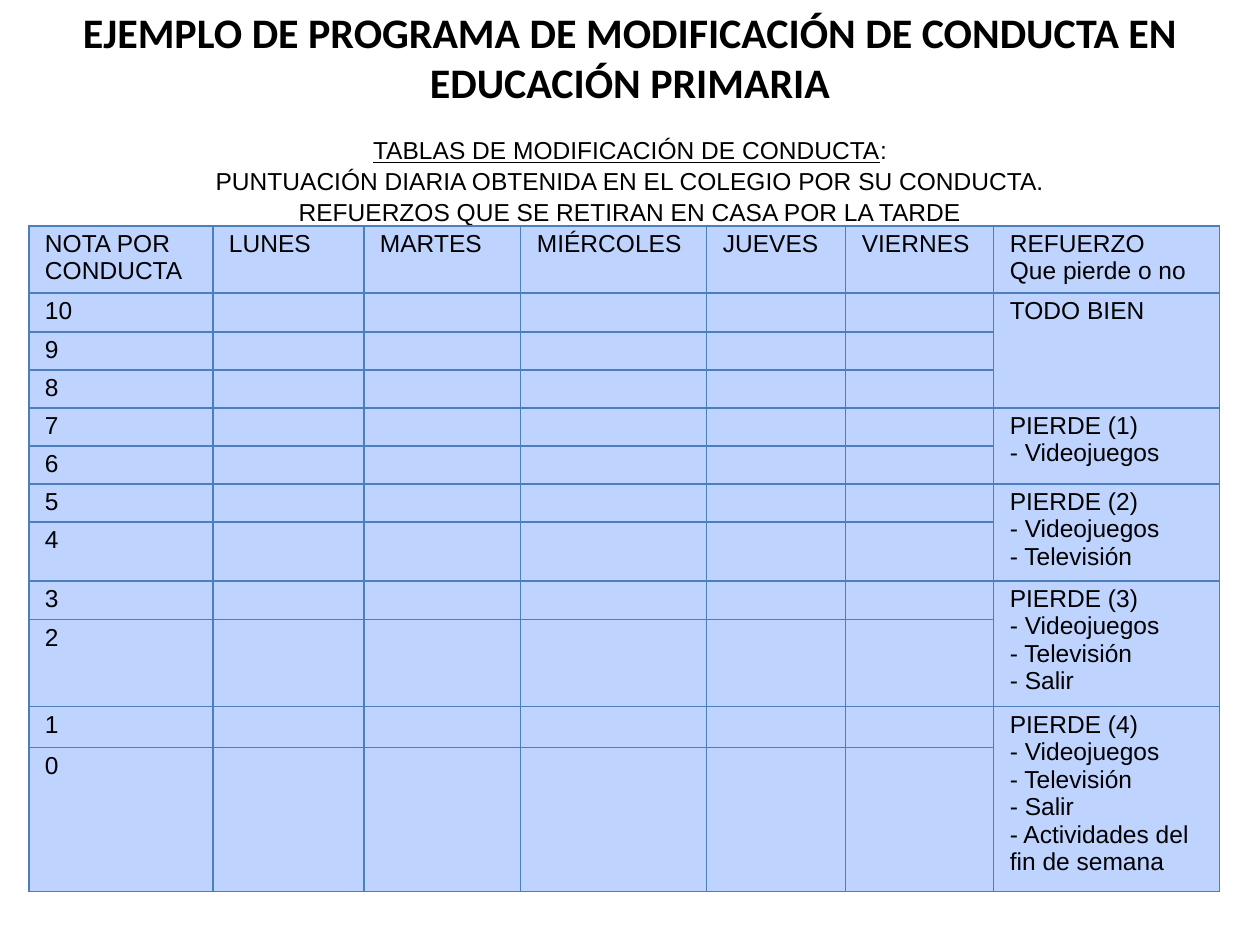
from dataclasses import dataclass

from lxml import etree
from pptx import Presentation
from pptx.dml.color import RGBColor
from pptx.enum.text import MSO_ANCHOR, PP_ALIGN
from pptx.oxml.ns import qn
from pptx.util import Pt

CENTER, LEFT = PP_ALIGN.CENTER, PP_ALIGN.LEFT
TOP, MIDDLE = MSO_ANCHOR.TOP, MSO_ANCHOR.MIDDLE
EMU_PER_PX = 914400 / 126
COLORS = {"text": "000000", "cell": "BFD3FF", "border": "4B7EBC"}


@dataclass(frozen=True)
class Reinforcement:
    first_row: int
    last_row: int
    lines: tuple[str, ...]


LOSSES = ("- Videojuegos", "- Televisión", "- Salir",
          "- Actividades del fin de semana")
REINFORCEMENTS = [Reinforcement(1, 3, ("TODO BIEN",))] + [
    Reinforcement(2 * n + 2, 2 * n + 3, (f"PIERDE ({n})", *LOSSES[:n]))
    for n in range(1, 5)
]
HEADERS = [
    ("NOTA POR", "CONDUCTA"), ("LUNES",), ("MARTES",), ("MIÉRCOLES",),
    ("JUEVES",), ("VIERNES",), ("REFUERZO", "Que pierde o no"),
]
COL_WIDTHS = [184, 151, 157, 186, 139, 148, 226]
ROW_HEIGHTS = [67, 39, 38, 38, 38, 38, 38, 59, 39, 87, 41, 144]


def px(n: int) -> int:
    return round(n * EMU_PER_PX)


def add_text(p, text: str, *, size: int = 14, font: str = "Arial",
             bold: bool = False, underline: bool = False, align=LEFT) -> None:
    p.alignment = align
    r = p.add_run()
    r.text = text
    r.font.size = Pt(size)
    r.font.name = font
    r.font.bold = bold
    r.font.underline = underline
    r.font.color.rgb = RGBColor.from_string(COLORS["text"])


def add_box(slide, x: int, y: int, w: int, h: int, anchor):
    tf = slide.shapes.add_textbox(px(x), px(y), px(w), px(h)).text_frame
    tf.word_wrap = True
    tf.vertical_anchor = anchor
    return tf


def next_paragraph(tf, index: int):
    return tf.add_paragraph() if index else tf.paragraphs[0]


def fill_cell(cell, lines: tuple[str, ...]) -> None:
    for i, line in enumerate(lines):
        add_text(next_paragraph(cell.text_frame, i), line)


def style_cell(cell) -> None:
    cell.margin_left = cell.margin_right = px(16)
    cell.margin_top = cell.margin_bottom = px(4)
    cell.text_frame.paragraphs[0].font.size = Pt(14)
    # Borders go before the fill in the cell properties
    tc_pr = cell._tc.get_or_add_tcPr()
    for side in ("lnL", "lnR", "lnT", "lnB"):
        ln = etree.SubElement(tc_pr, qn(f"a:{side}"), w=str(Pt(0.75)))
        fill = etree.SubElement(ln, qn("a:solidFill"))
        etree.SubElement(fill, qn("a:srgbClr"), val=COLORS["border"])
    cell.fill.solid()
    cell.fill.fore_color.rgb = RGBColor.from_string(COLORS["cell"])


def add_subtitle(slide) -> None:
    tf = add_box(slide, 0, 129, 1260, 102, MIDDLE)
    lines = [
        [("TABLAS DE MODIFICACIÓN DE CONDUCTA", True), (":", False)],
        [("PUNTUACIÓN DIARIA OBTENIDA EN EL COLEGIO POR SU CONDUCTA.", False)],
        [("REFUERZOS QUE SE RETIRAN EN CASA POR LA TARDE", False)],
    ]
    for i, parts in enumerate(lines):
        p = next_paragraph(tf, i)
        p.line_spacing = 1.05
        for text, underline in parts:
            add_text(p, text, underline=underline, align=CENTER)


def add_score_table(slide) -> None:
    table = slide.shapes.add_table(
        len(ROW_HEIGHTS), len(COL_WIDTHS), px(29), px(226),
        px(sum(COL_WIDTHS)), px(sum(ROW_HEIGHTS))).table
    table.horz_banding = False
    for col, width in zip(table.columns, COL_WIDTHS):
        col.width = px(width)
    for row, height in zip(table.rows, ROW_HEIGHTS):
        row.height = px(height)
    for cell in table.iter_cells():
        style_cell(cell)

    # Header row, then scores from 10 down to 0
    for c, lines in enumerate(HEADERS):
        fill_cell(table.cell(0, c), lines)
    for row in range(1, len(ROW_HEIGHTS)):
        fill_cell(table.cell(row, 0), (str(11 - row),))

    # Reinforcement column
    last = len(COL_WIDTHS) - 1
    for item in REINFORCEMENTS:
        cell = table.cell(item.first_row, last)
        cell.merge(table.cell(item.last_row, last))
        fill_cell(cell, item.lines)


def add_title(slide) -> None:
    p = add_box(slide, 0, 0, 1260, 117, TOP).paragraphs[0]
    p.space_after = Pt(6)
    add_text(p, "EJEMPLO DE PROGRAMA DE MODIFICACIÓN DE CONDUCTA EN "
             "EDUCACIÓN PRIMARIA", size=24, font="Calibri", bold=True,
             align=CENTER)


def main() -> None:
    prs = Presentation()
    prs.slide_width, prs.slide_height = px(1260), px(945)
    slide = prs.slides.add_slide(prs.slide_layouts[6])
    add_subtitle(slide)
    add_score_table(slide)
    add_title(slide)
    prs.save("out.pptx")


if __name__ == "__main__":
    main()
